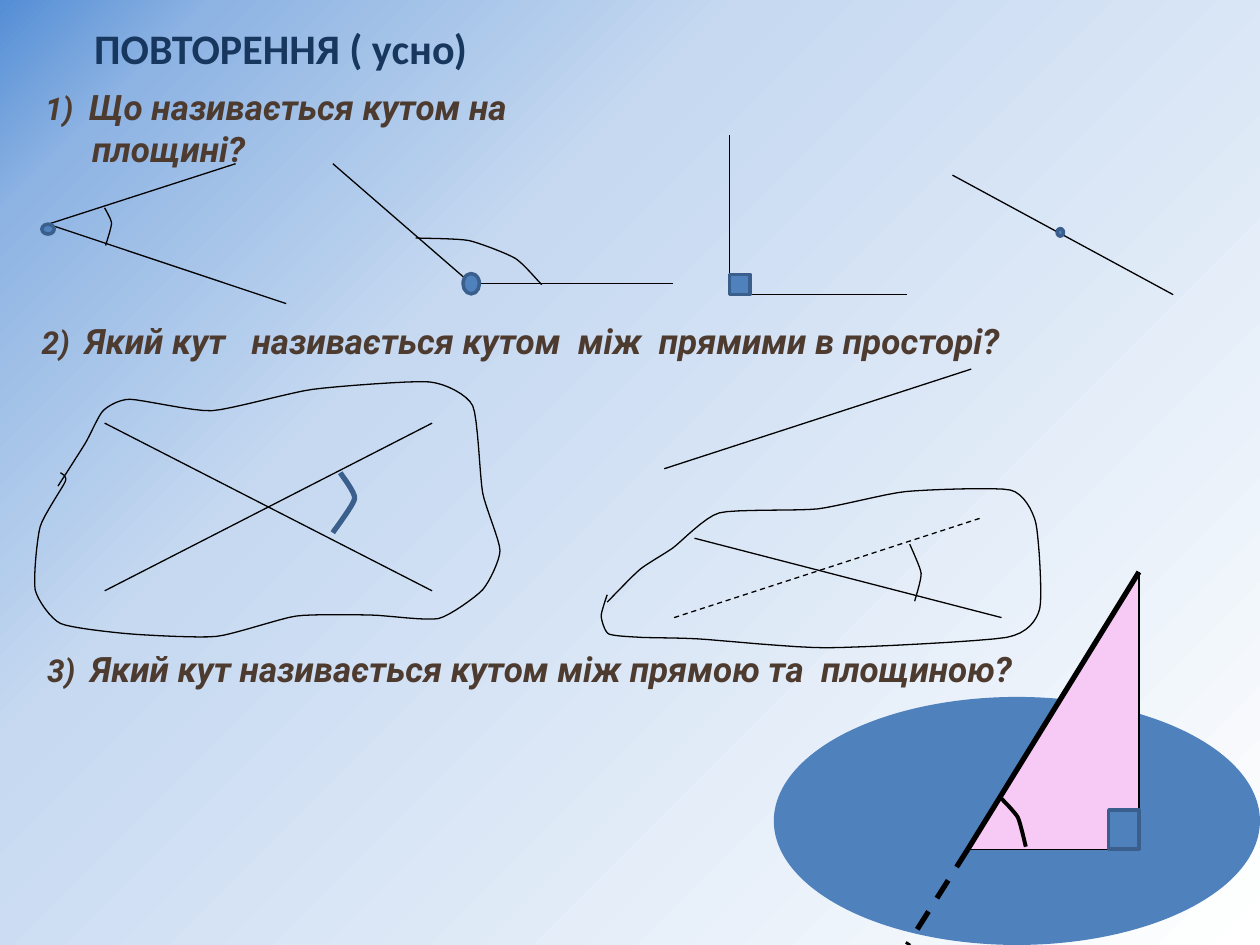
from itertools import pairwise
from typing import Any, NamedTuple, Optional

from lxml.etree import SubElement
from pptx import Presentation
from pptx.dml.color import RGBColor
from pptx.enum.dml import MSO_LINE
from pptx.enum.shapes import MSO_CONNECTOR, MSO_SHAPE
from pptx.oxml import parse_xml
from pptx.oxml.ns import nsdecls, qn
from pptx.util import Cm, Pt

BLACK = RGBColor(0x00, 0x00, 0x00)
BLUE = RGBColor(0x4F, 0x81, 0xBD)
DARK_BLUE = RGBColor(0x3A, 0x5F, 0x8C)
NAVY = RGBColor(0x17, 0x37, 0x5E)
BROWN = RGBColor(0x4E, 0x3B, 0x30)
PINK = RGBColor(0xF6, 0xCA, 0xF4)
BACKGROUND_STOPS = {
    0: RGBColor(0x55, 0x8E, 0xD5),
    10: RGBColor(0x8E, 0xB4, 0xE3),
    34: RGBColor(0xC6, 0xD9, 0xF1),
    100: RGBColor(0xFF, 0xFF, 0xFF),
}
HEADING_FORMAT = {"name": "Calibri", "size": Pt(24), "bold": True}
NUMBER_FORMAT = {"name": "Roboto", "size": Pt(18), "bold": True, "italic": True}
QUESTION_FORMAT = {**NUMBER_FORMAT, "size": Pt(20)}
HANGING_INDENT = Cm(0.95)
CURVE_STEPS = 8
CURVE_TENSION = 0.3


class Point(NamedTuple):
    x: float
    y: float

    def moved(self, right: float, down: float) -> "Point":
        return Point(self.x + right, self.y + down)


class Question(NamedTuple):
    text: str
    left: float
    top: float
    width: float


class Segment(NamedTuple):
    start: Point
    end: Point
    weight: float = 0.75
    dashed: bool = False


class Mark(NamedTuple):
    kind: MSO_SHAPE
    center: Point
    width: float
    height: float
    outline: Optional[RGBColor] = DARK_BLUE


class Polygon(NamedTuple):
    corners: list[Point]
    fill: RGBColor


class Curve(NamedTuple):
    anchors: list[tuple[float, float]]
    weight: float = 0.75
    color: RGBColor = BLACK


QUESTIONS = [
    Question("Що називається кутом на площині?", 0.66, 1.6, 12.67),
    Question("Який кут   називається кутом  між  прямими в просторі?", 0.59, 6.32, 23.37),
    Question("Який кут називається кутом між прямою та  площиною?", 0.7, 12.93, 22.83),
]


def acute_angle() -> list[Any]:
    vertex = Point(0.97, 4.52)
    return [
        Segment(vertex, Point(4.75, 3.3)),
        Segment(vertex, Point(5.77, 6.12)),
        Mark(MSO_SHAPE.OVAL, vertex.moved(0, 0.1), 0.25, 0.2),
        Curve([(2.11, 4.19), (2.25, 4.5), (2.13, 4.95)]),
    ]


def obtuse_angle() -> list[Any]:
    vertex = Point(9.5, 5.72)
    return [
        Segment(vertex, Point(6.71, 3.3)),
        Segment(vertex, vertex.moved(4.06, 0)),
        Mark(MSO_SHAPE.OVAL, vertex, 0.33, 0.41),
        Curve([(8.38, 4.8), (9.45, 4.85), (10.39, 5.21), (10.92, 5.74)]),
    ]


def right_angle() -> list[Any]:
    vertex, side = Point(14.71, 5.94), 0.41
    return [
        Segment(vertex, vertex.moved(0, -3.22)),
        Segment(vertex, vertex.moved(3.58, 0)),
        Mark(MSO_SHAPE.RECTANGLE, vertex.moved(side / 2, -side / 2), side, side),
    ]


def straight_angle() -> list[Any]:
    start, end = Point(19.2, 3.53), Point(23.65, 5.94)
    middle = Point((start.x + end.x) / 2, (start.y + end.y) / 2)
    return [Segment(start, end), Mark(MSO_SHAPE.OVAL, middle.moved(-0.05, -0.05), 0.13, 0.15)]


def crossing_lines() -> list[Any]:
    left, right, top, bottom = 2.11, 8.71, 8.53, 11.91
    plane_outline = [
        (1.17, 9.8), (1.73, 8.92), (2.08, 8.28), (2.62, 8.05), (4.27, 8.28), (6.3, 7.85),
        (8.66, 7.7), (9.53, 8.18), (9.73, 9.93), (10.08, 11.1), (9.73, 11.89), (8.84, 12.47),
        (7.49, 12.4), (5.97, 12.42), (4.37, 12.83), (2.62, 12.78), (1.22, 12.57),
        (0.71, 11.89), (0.81, 10.62), (1.32, 9.7), (1.22, 9.53),
    ]
    return [
        Segment(Point(left, top), Point(right, bottom)),
        Segment(Point(left, bottom), Point(right, top)),
        Curve([(6.86, 9.53), (7.15, 10.05), (6.71, 10.74)], 3, DARK_BLUE),
        Curve(plane_outline),
    ]


def skew_lines() -> list[Any]:
    start, end, shift = Point(13.39, 9.45), Point(19.58, 7.44), (0.2, 3)
    plane_outline = [
        (12.24, 12.14), (12.9, 11.48), (13.56, 11.05), (14.5, 10.34), (16.48, 10.26),
        (18.26, 9.91), (20.37, 9.88), (20.88, 10.54), (20.96, 12.27), (20.29, 12.85),
        (16.66, 13.06), (14.07, 12.88), (12.93, 12.85), (12.27, 12.78), (12.12, 12.42),
        (12.24, 11.99),
    ]
    return [
        Segment(start, end),
        Segment(start.moved(*shift), end.moved(*shift), dashed=True),
        Segment(Point(14, 10.85), Point(20.19, 12.45)),
        Curve(plane_outline),
        Curve([(18.34, 10.97), (18.57, 11.56), (18.44, 12.12)]),
    ]


def line_and_plane() -> list[Any]:
    apex, foot, intersection = Point(22.96, 11.53), Point(22.96, 17.12), Point(19.51, 17.12)
    width, height = 0.61, 0.79
    return [
        Mark(MSO_SHAPE.OVAL, Point(20.5, 16.55), 9.8, 5, outline=None),
        Polygon([apex, foot, intersection], PINK),
        Segment(apex, intersection, weight=3),
        Segment(apex, foot),
        Segment(intersection, Point(18.29, 19.05), weight=3, dashed=True),
        Segment(intersection, foot),
        Mark(MSO_SHAPE.RECTANGLE, foot.moved(-width / 2, -height / 2), width, height),
        Curve([(20.19, 16.1), (20.52, 16.48), (20.68, 17.07)], 2.25),
    ]


FIGURES = [
    acute_angle, obtuse_angle, right_angle, straight_angle,
    crossing_lines, skew_lines, line_and_plane,
]


def smooth(anchors: list[tuple[float, float]]) -> list[Point]:
    padded = [anchors[0], *anchors, anchors[-1]]
    tangents = [
        tuple(CURVE_TENSION * (after - before) for before, after in zip(previous, following))
        for previous, following in zip(padded, padded[2:])
    ]
    points = [Point(*anchors[0])]
    for (start, leaving), (end, arriving) in pairwise(zip(anchors, tangents)):
        for step in range(1, CURVE_STEPS + 1):
            t = step / CURVE_STEPS
            weights = (2 * t**3 - 3 * t**2 + 1, t**3 - 2 * t**2 + t, 3 * t**2 - 2 * t**3, t**3 - t**2)
            points.append(Point(*(
                sum(weight * value for weight, value in zip(weights, values))
                for values in zip(start, leaving, end, arriving)
            )))
    return points


def paint_background(slide: Any) -> None:
    slide.background.fill.gradient()
    gradient = slide.element.find(".//" + qn("a:gradFill"))
    stops = "".join(
        f'<a:gs pos="{percent * 1000}"><a:srgbClr val="{color}"/></a:gs>'
        for percent, color in BACKGROUND_STOPS.items()
    )
    gradient.getparent().replace(gradient, parse_xml(
        f'<a:gradFill {nsdecls("a")} rotWithShape="1"><a:gsLst>{stops}</a:gsLst>'
        '<a:path path="circle"><a:fillToRect r="100000" b="100000"/></a:path></a:gradFill>'
    ))


def add_run(paragraph: Any, text: str, color: RGBColor, values: dict[str, Any]) -> None:
    run = paragraph.add_run()
    run.text = text
    run.font.color.rgb = color
    for name, value in values.items():
        setattr(run.font, name, value)


def add_question(slide: Any, number: int, question: Question) -> None:
    box = slide.shapes.add_textbox(Cm(question.left), Cm(question.top), Cm(question.width), Cm(1.12))
    box.text_frame.word_wrap = True
    paragraph = box.text_frame.paragraphs[0]
    paragraph.space_before = Pt(4)
    properties = paragraph._p.get_or_add_pPr()
    properties.set("marL", str(HANGING_INDENT))
    properties.set("indent", str(-HANGING_INDENT))
    add_run(paragraph, f"{number})  ", BROWN, NUMBER_FORMAT)
    add_run(paragraph, question.text, BROWN, QUESTION_FORMAT)


def style_shape(shape: Any, fill: Optional[RGBColor], outline: Optional[RGBColor], weight: float) -> None:
    shape.shadow.inherit = False
    for target, color in ((shape.fill, fill), (shape.line.fill, outline)):
        if color is None:
            target.background()
        else:
            target.solid()
            target.fore_color.rgb = color
    if outline is not None:
        shape.line.width = Pt(weight)


def add_segment(slide: Any, segment: Segment) -> None:
    ends = [Cm(value) for value in segment.start + segment.end]
    connector = slide.shapes.add_connector(MSO_CONNECTOR.STRAIGHT, *ends)
    connector.line.color.rgb = BLACK
    connector.line.width = Pt(segment.weight)
    if segment.dashed:
        connector.line.dash_style = MSO_LINE.DASH
    SubElement(connector._element.spPr, qn("a:effectLst"))


def add_mark(slide: Any, mark: Mark) -> None:
    corner = mark.center.moved(-mark.width / 2, -mark.height / 2)
    frame = [Cm(value) for value in (*corner, mark.width, mark.height)]
    style_shape(slide.shapes.add_shape(mark.kind, *frame), BLUE, mark.outline, 2)


def add_outline(slide: Any, points: list[Point], closed: bool) -> Any:
    start, *others = [(Cm(point.x), Cm(point.y)) for point in points]
    builder = slide.shapes.build_freeform(*start)
    builder.add_line_segments(others, close=closed)
    return builder.convert_to_shape()


def add_polygon(slide: Any, polygon: Polygon) -> None:
    style_shape(add_outline(slide, polygon.corners, True), polygon.fill, None, 0)


def add_curve(slide: Any, curve: Curve) -> None:
    style_shape(add_outline(slide, smooth(curve.anchors), False), None, curve.color, curve.weight)


DRAWERS = {Segment: add_segment, Mark: add_mark, Polygon: add_polygon, Curve: add_curve}


def main() -> None:
    presentation = Presentation()
    presentation.slide_width, presentation.slide_height = Cm(25.4), Cm(19.05)
    slide = presentation.slides.add_slide(presentation.slide_layouts[6])
    paint_background(slide)
    heading = slide.shapes.add_textbox(Cm(1.65), Cm(0.33), Cm(8.13), Cm(1.27))
    add_run(heading.text_frame.paragraphs[0], "ПОВТОРЕННЯ ( усно)", NAVY, HEADING_FORMAT)
    for number, question in enumerate(QUESTIONS, start=1):
        add_question(slide, number, question)
    for figure in FIGURES:
        for element in figure():
            DRAWERS[type(element)](slide, element)
    presentation.save("out.pptx")


if __name__ == "__main__":
    main()
